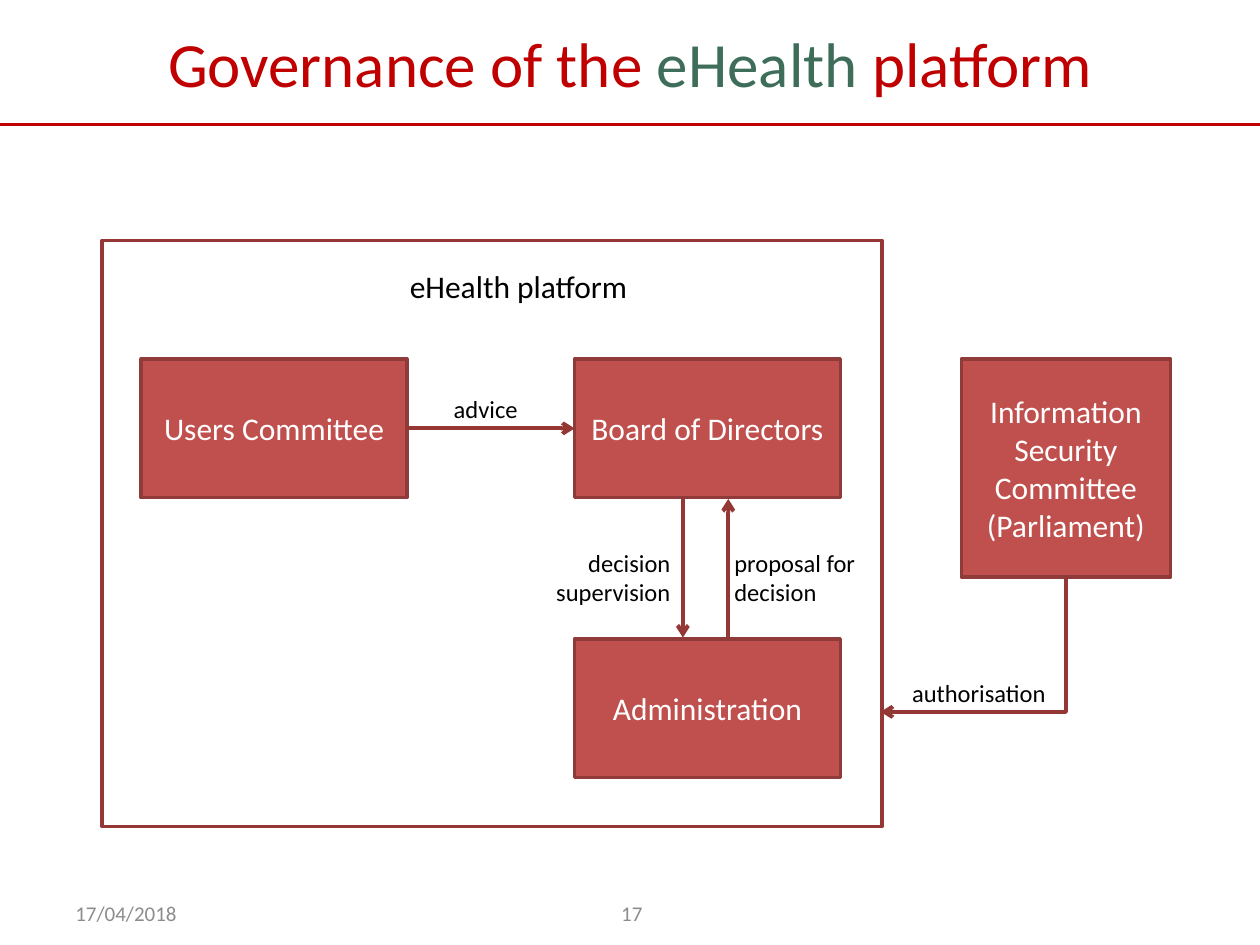
from dataclasses import dataclass

from lxml.etree import SubElement
from pptx import Presentation
from pptx.dml.color import RGBColor
from pptx.enum.shapes import MSO_CONNECTOR as LINK, MSO_SHAPE as SHAPE
from pptx.enum.text import MSO_ANCHOR as ANCHOR, PP_ALIGN as ALIGN
from pptx.oxml.ns import qn
from pptx.util import Inches, Pt

FONT = "Calibri"
RED, GREEN, BRICK, BORDER, ARROW = "C00000", "3E6E5A", "C0504D", "8E3B39", "953735"
WHITE, BLACK, GREY = "FFFFFF", "000000", "8C8C8C"
UNIT = 0.1


@dataclass
class Box:
    """An area measured in columns and rows of a tenth of an inch."""
    col: float
    row: float
    cols: float
    rows: float

    def inner(self, col, row, cols, rows):
        """Return an area placed relative to this one."""
        return Box(self.col + col, self.row + row, cols, rows)

    def point(self, col, row):
        """Return the slide position of a grid point."""
        return Inches((self.col + col) * UNIT), Inches((self.row + row) * UNIT)

    def frame(self):
        """Return left, top, width and height."""
        return *self.point(0, 0), Inches(self.cols * UNIT), Inches(self.rows * UNIT)


def color(value):
    """Turn a hex string into a colour."""
    return RGBColor.from_string(value)


def write(frame, lines, size, align, anchor=ANCHOR.TOP, wrap=True):
    """Fill a text frame with lines, each a list of (text, colour) runs."""
    frame.word_wrap = wrap
    frame.vertical_anchor = anchor
    for index, runs in enumerate(lines):
        paragraph = frame.add_paragraph() if index else frame.paragraphs[0]
        paragraph.alignment = align
        for text, tint in runs:
            run = paragraph.add_run()
            run.text = text
            run.font.name, run.font.size = FONT, Pt(size)
            run.font.color.rgb = color(tint)


def label(slide, box, texts, size=14, align=ALIGN.LEFT, tint=BLACK, **options):
    """Place plain text lines in a box."""
    area = slide.shapes.add_textbox(*box.frame())
    write(area.text_frame, [[(text, tint)] for text in texts], size, align, **options)


def block(slide, box, texts=(), fill=BRICK, border=BORDER):
    """Draw an outlined rectangle with centred text."""
    shape = slide.shapes.add_shape(SHAPE.RECTANGLE, *box.frame())
    shape.shadow.inherit = False
    shape.fill.solid()
    shape.fill.fore_color.rgb = color(fill)
    shape.line.color.rgb = color(border)
    shape.line.width = Pt(2)
    write(shape.text_frame, [[(text, WHITE)] for text in texts], 18, ALIGN.CENTER, ANCHOR.MIDDLE)
    return shape


def link(slide, start, end, kind=LINK.STRAIGHT, tint=ARROW, width=2.25, arrow=True):
    """Draw a connector between two positions."""
    line = slide.shapes.add_connector(kind, *start, *end)
    line.line.color.rgb = color(tint)
    line.line.width = Pt(width)
    properties = line._element.spPr
    if arrow:
        SubElement(properties.find(qn("a:ln")), qn("a:tailEnd"), type="arrow")
    SubElement(properties, qn("a:effectLst"))
    return line


def header(slide, box):
    """Format the title and rule it off below."""
    link(slide, box.point(0, box.rows), box.point(box.cols, box.rows), tint=RED, width=1.5, arrow=False)
    title = slide.shapes.title
    title.left, title.top, title.width, title.height = box.frame()
    runs = [("Governance of the ", RED), ("eHealth", GREEN), (" platform", RED)]
    write(title.text_frame, [runs], 36, ALIGN.CENTER, ANCHOR.MIDDLE)


def platform(slide, box):
    """Draw the platform with its three bodies and their relations."""
    block(slide, box, fill=WHITE, border=ARROW)
    label(slide, box.inner(4.3, 1.6, 57.5, 4), ["eHealth platform"], 18, ALIGN.CENTER)
    left, right, upper, lower, width, height = 3.1, 37.5, 9.4, 31.6, 21.1, 11
    users, board, _ = [
        block(slide, box.inner(col, row, width, height), [name])
        for col, row, name in [(left, upper, "Users Committee"),
                               (right, upper, "Board of Directors"),
                               (right, lower, "Administration")]
    ]
    middle = upper + height / 2
    advice = link(slide, box.point(left + width, middle), box.point(right, middle))
    advice.begin_connect(users, 3)
    advice.end_connect(board, 1)
    top, bottom = upper + height + 0.1, lower - 0.1
    down, up = right + 8.6, right + 12.2
    link(slide, box.point(down, top), box.point(down, bottom))
    link(slide, box.point(up, bottom), box.point(up, top))
    label(slide, box.inner(23.8, 11.7, 13.3, 3.4), ["advice"], align=ALIGN.CENTER)
    label(slide, box.inner(down - 11.2, 23.9, 11.2, 5.7), ["decision", "supervision"],
          align=ALIGN.RIGHT, wrap=False)
    label(slide, box.inner(up - 0.5, 23.9, 11.7, 5.7), ["proposal for", "decision"], wrap=False)


def parliament(slide, box):
    """Draw the security committee and its authorisation of the platform."""
    body = box.inner(6.4, 0, 16.6, 17.3)
    block(slide, body, ["Information Security Committee", "(Parliament)"])
    drop, reach = 10.7, 6.4 + body.cols / 2
    mid_col, mid_row = reach / 2, body.rows + drop / 2
    elbow = link(slide, box.point(mid_col - drop / 2, mid_row - reach / 2),
                 box.point(mid_col + drop / 2, mid_row + reach / 2), LINK.ELBOW)
    properties = elbow._element.spPr
    properties.find(qn("a:prstGeom")).set("prst", "bentConnector2")
    properties.find(qn("a:xfrm")).set("rot", str(90 * 60000))
    label(slide, box.inner(1.5, 24.8, 13.2, 3.4), ["authorisation"], wrap=False)


def footer(slide, box):
    """Write the date and the slide number."""
    for col, text, align in [(0, "17/04/2018", ALIGN.LEFT), (33.5, "17", ALIGN.CENTER)]:
        label(slide, box.inner(col, 0, 23.3, box.rows), [text], 12, align, GREY, anchor=ANCHOR.MIDDLE)


def main():
    """Build and save the slide."""
    deck = Presentation()
    deck.slide_width, deck.slide_height = Inches(10), Inches(7.5)
    slide = deck.slides.add_slide(deck.slide_layouts[5])
    header(slide, Box(0, 0, 100, 9.9))
    platform(slide, Box(8.1, 19.1, 61.9, 46.5))
    parliament(slide, Box(69.9, 28.5, 23, 28))
    footer(slide, Box(5, 70.5, 90, 4))
    deck.save("out.pptx")


if __name__ == "__main__":
    main()
